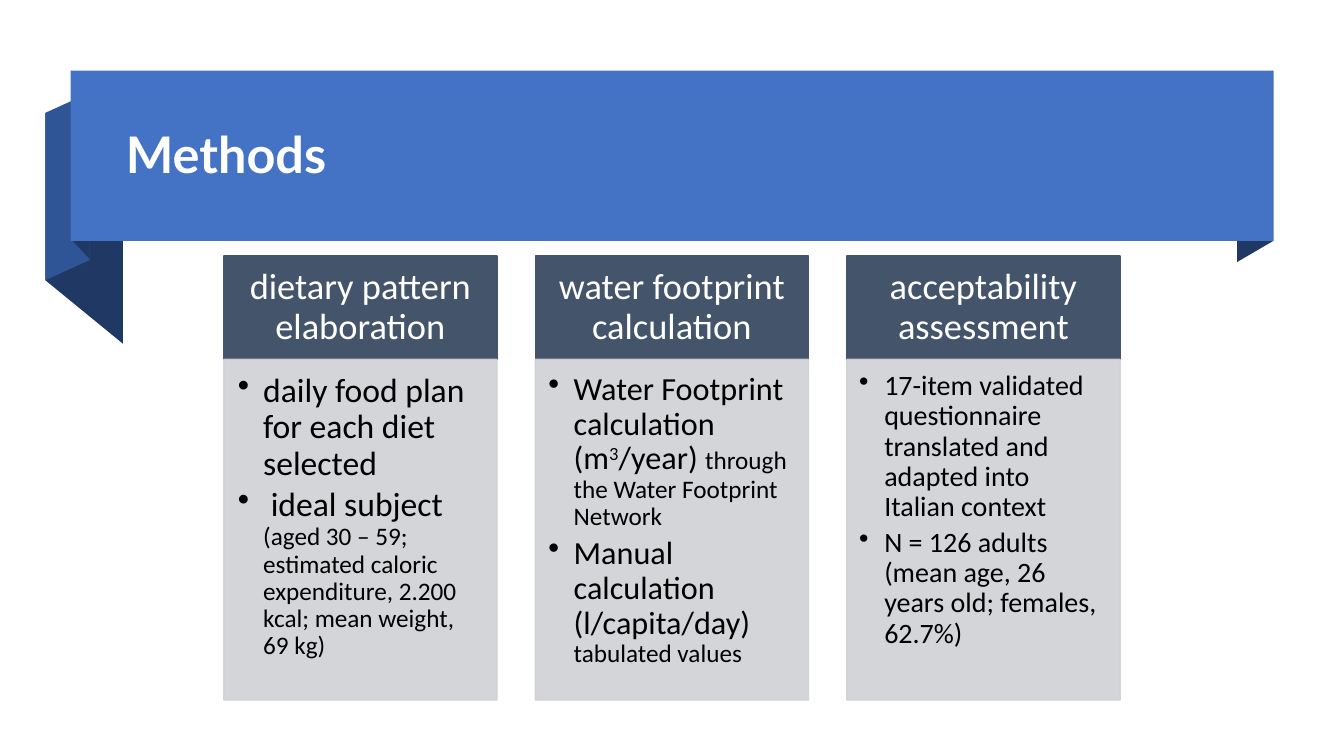
from lxml import etree
from pptx import Presentation
from pptx.dml.color import RGBColor
from pptx.enum.shapes import MSO_SHAPE
from pptx.enum.text import MSO_ANCHOR, PP_ALIGN
from pptx.oxml.ns import qn
from pptx.util import Inches, Pt

RECTANGLE = MSO_SHAPE.RECTANGLE
TOP, MIDDLE = MSO_ANCHOR.TOP, MSO_ANCHOR.MIDDLE
LEFT, CENTER = PP_ALIGN.LEFT, PP_ALIGN.CENTER

WHITE = RGBColor(0xFF, 0xFF, 0xFF)
BLACK = RGBColor(0x00, 0x00, 0x00)
BLUE = RGBColor(0x44, 0x72, 0xC4)
MID_BLUE = RGBColor(0x2F, 0x55, 0x97)
NAVY = RGBColor(0x20, 0x38, 0x64)
SLATE = RGBColor(0x44, 0x54, 0x6A)
GREY = RGBColor(0xCF, 0xD1, 0xD4)

# The grid: columns and rows are a tenth of an inch
CELL = Inches(0.1)

# Ribbon folds: left or right edge x and top, other edge x and top, height, colour
FOLDS = [
    (126.3, 7, 122.7, 9.1, 16.9, NAVY),
    (4.5, 11.2, 12.2, 17.5, 16.6, NAVY),
    (4.5, 11.2, 8.9, 9.2, 16.6, MID_BLUE),
    (7.1, 7, 8.9, 8.9, 16.8, NAVY),
]

# Cards: heading, margins, paragraphs of (text, size, superscript) runs
CARDS = [
    ("dietary pattern elaboration", (1.4, 1.4, 1.9, 2.1), [
        [("daily food plan for each diet selected", 24, False)],
        [(" ideal subject ", 24, False),
         ("(aged 30 – 59; estimated caloric expenditure, 2.200 kcal; "
          "mean weight, 69 kg)", 18, False)],
    ]),
    ("water footprint calculation", (1.3, 1.3, 1.8, 2), [
        [("Water Footprint calculation (m", 23, False), ("3", 23, True),
         ("/year) ", 23, False),
         ("through the Water Footprint Network", 18, False)],
        [("Manual calculation (l/capita/day) ", 23, False),
         ("tabulated values", 18, False)],
    ]),
    ("acceptability assessment", (1.2, 1.2, 1.6, 1.7), [
        [("17-item validated questionnaire translated and adapted into "
          "Italian context", 20, False)],
        [("N = 126 adults (mean age, 26 years old; females, 62.7%)", 20, False)],
    ]),
]
CARD_LEFT, CARD_STEP, CARD_WIDTH = 22.2, 30.9, 27.1
HEAD_TOP, HEAD_HEIGHT, BODY_HEIGHT = 25.4, 10.25, 33.8


def cells(*counts):
    return [round(count * CELL) for count in counts]


class MethodsPage:
    font = "Calibri"

    def __init__(self, deck):
        self.page = deck.slides.add_slide(deck.slide_layouts[6])

    def paint(self, shape, fill, line=None, opacity=None):
        shape.shadow.inherit = False
        shape.fill.solid()
        shape.fill.fore_color.rgb = fill
        if line is None:
            shape.line.fill.background()
        else:
            shape.line.color.rgb = line
            shape.line.width = Pt(1)
        if opacity:
            for color in shape._element.spPr.iter(qn("a:srgbClr")):
                etree.SubElement(color, qn("a:alpha"), val=str(opacity * 1000))

    def rectangle(self, area, fill, line=None, opacity=None):
        box = self.page.shapes.add_shape(RECTANGLE, *cells(*area))
        self.paint(box, fill, line, opacity)
        return box

    def fold(self, start_x, start_top, end_x, end_top, height, fill):
        corners = [(start_x, start_top), (end_x, end_top),
                   (end_x, end_top + height), (start_x, start_top + height)]
        points = [cells(*corner) for corner in corners]
        builder = self.page.shapes.build_freeform(*points[0])
        builder.add_line_segments(points[1:], close=True)
        self.paint(builder.convert_to_shape(), fill)

    def frame(self, box, anchor, margins):
        frame = box.text_frame
        left, top, right, bottom = cells(*margins)
        settings = {"word_wrap": True, "vertical_anchor": anchor,
                    "margin_left": left, "margin_top": top,
                    "margin_right": right, "margin_bottom": bottom}
        for name, value in settings.items():
            setattr(frame, name, value)
        return frame

    def fill_para(self, para, runs, color, align=LEFT, after=0, **font):
        settings = {"alignment": align, "line_spacing": 0.9, "space_after": Pt(after)}
        for name, value in settings.items():
            setattr(para, name, value)
        for text, size, superscript in runs:
            span = para.add_run()
            span.text = text
            span.font.color.rgb = color
            for name, value in {"name": self.font, "size": Pt(size), **font}.items():
                setattr(span.font, name, value)
            if superscript:
                span.font._element.set("baseline", "30000")

    def bullet(self, para):
        properties = para._p.get_or_add_pPr()
        properties.set("marL", str(Inches(0.25)))
        properties.set("indent", str(-Inches(0.25)))
        etree.SubElement(properties, qn("a:buChar"), char="•")

    def title(self, text, area):
        box = self.page.shapes.add_textbox(*cells(*area))
        frame = self.frame(box, MIDDLE, (1, 0.5, 1, 0.5))
        self.fill_para(frame.paragraphs[0], [(text, 36, False)], WHITE,
                       name="Lato", bold=True)

    def card(self, left, heading, margins, paragraphs):
        head = self.rectangle((left, HEAD_TOP, CARD_WIDTH, HEAD_HEIGHT), SLATE, SLATE)
        frame = self.frame(head, MIDDLE, (2, 1.2, 2, 1.2))
        self.fill_para(frame.paragraphs[0], [(heading, 26, False)], WHITE, CENTER)

        body = self.rectangle((left, HEAD_TOP + HEAD_HEIGHT, CARD_WIDTH, BODY_HEIGHT),
                              GREY, GREY, opacity=90)
        frame = self.frame(body, TOP, margins)
        for index, runs in enumerate(paragraphs):
            para = frame.add_paragraph() if index else frame.paragraphs[0]
            self.fill_para(para, runs, BLACK, after=4)
            self.bullet(para)


def main():
    deck = Presentation()
    deck.slide_width, deck.slide_height = Inches(13.33), Inches(7.5)
    methods = MethodsPage(deck)

    # Ribbon banner with the title
    for fold in FOLDS:
        methods.fold(*fold)
    methods.rectangle((7, 7, 119.3, 16.9), BLUE)
    methods.title("Methods", (11.5, 8.3, 112.7, 14.5))

    # Three cards
    for index, (heading, margins, paragraphs) in enumerate(CARDS):
        methods.card(CARD_LEFT + index * CARD_STEP, heading, margins, paragraphs)

    deck.save("out.pptx")


if __name__ == "__main__":
    main()
